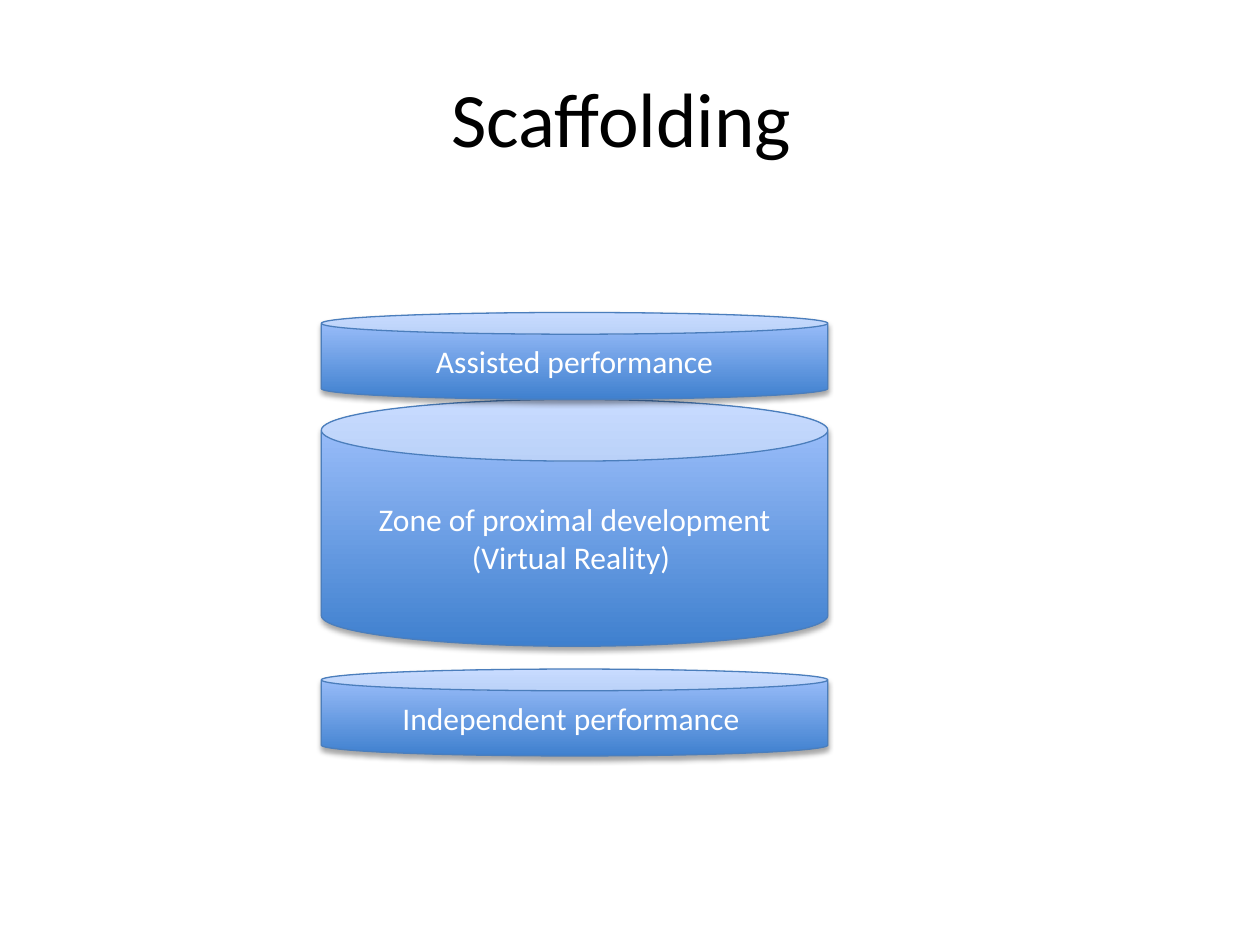
from dataclasses import dataclass

from lxml.etree import SubElement
from pptx import Presentation
from pptx.dml.color import RGBColor
from pptx.enum.shapes import MSO_SHAPE
from pptx.enum.text import MSO_ANCHOR, PP_ALIGN
from pptx.oxml.ns import qn
from pptx.shapes.autoshape import Shape
from pptx.util import Inches, Pt

BLACK = RGBColor(0x00, 0x00, 0x00)
WHITE = RGBColor(0xFF, 0xFF, 0xFF)
DEEP = RGBColor(0x3F, 0x80, 0xCE)
PALE = RGBColor(0xA4, 0xC4, 0xFF)
EDGE = RGBColor(0x4B, 0x7E, 0xBC)

LEFT, WIDTH = 2.55, 4.02
SHADE = {"blurRad": Pt(3.1), "dist": Pt(1.8), "dir": 90 * 60000, "rotWithShape": 0}


@dataclass
class Can:
    top: float
    height: float
    lines: list[str]


# Back to front, so that each can covers the one below it.
CANS = [
    Can(5.31, 0.69, ["Independent performance "]),
    Can(3.17, 1.96, ["Zone of proximal development", "(Virtual Reality) "]),
    Can(2.48, 0.69, ["Assisted performance"]),
]


def write(shape: Shape, lines: list[str], size: float, color: RGBColor) -> None:
    frame = shape.text_frame
    frame.word_wrap = True
    frame.vertical_anchor = MSO_ANCHOR.MIDDLE
    frame.text = "\n".join(lines)
    style = {"name": "Calibri", "size": Pt(size)}
    for para in frame.paragraphs:
        para.alignment = PP_ALIGN.CENTER
        for run in para.runs:
            for key, value in style.items():
                setattr(run.font, key, value)
            run.font.color.rgb = color


def shade(shape: Shape) -> None:
    """Give the shape a soft black shadow straight below it."""
    shape.shadow.inherit = False
    effects = shape.element.spPr.find(qn("a:effectLst"))
    outer = SubElement(effects, qn("a:outerShdw"),
                       {key: str(value) for key, value in SHADE.items()})
    color = SubElement(outer, qn("a:srgbClr"), val=str(BLACK))
    SubElement(color, qn("a:alpha"), val="35000")


def draw(slide, can: Can) -> None:
    shape = slide.shapes.add_shape(
        MSO_SHAPE.CAN, Inches(LEFT), Inches(can.top), Inches(WIDTH), Inches(can.height))
    shape.fill.gradient()
    shape.fill.gradient_angle = 90
    for stop, color, place in zip(shape.fill.gradient_stops, (DEEP, PALE), (0, 1)):
        stop.color.rgb = color
        stop.position = place
    shape.line.color.rgb = EDGE
    shape.line.width = Pt(0.75)
    shade(shape)
    write(shape, can.lines, 18, WHITE)


def main() -> None:
    deck = Presentation()
    deck.slide_width, deck.slide_height = Inches(10), Inches(7.5)
    slide = deck.slides.add_slide(deck.slide_layouts[6])
    title = slide.shapes.add_textbox(Inches(0.5), Inches(0.3), Inches(9), Inches(1.25))
    write(title, ["Scaffolding "], 44, BLACK)
    for can in CANS:
        draw(slide, can)
    deck.save("out.pptx")


if __name__ == "__main__":
    main()
